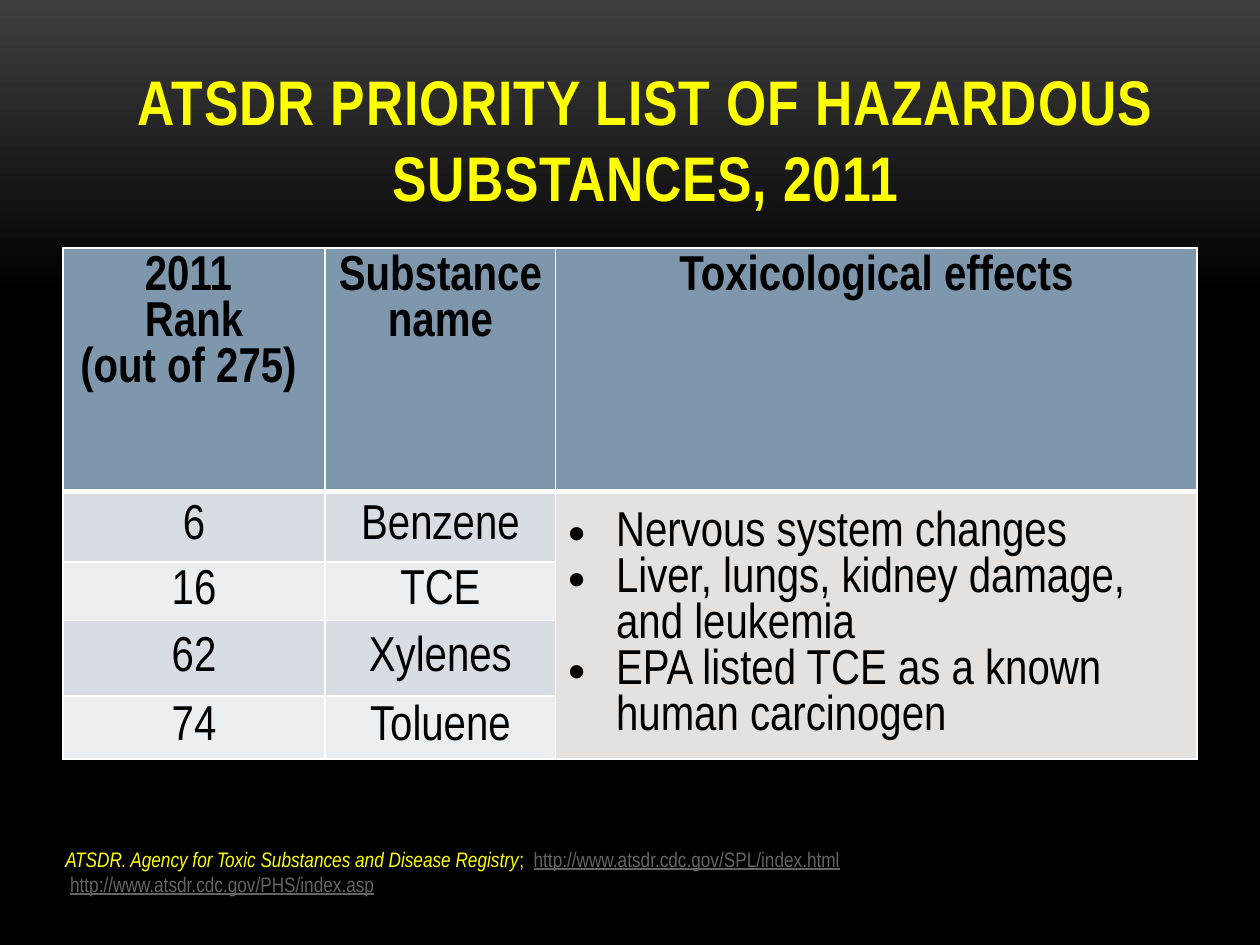
import lxml.etree
import pptx
import pptx.dml.color
import pptx.enum.text
import pptx.oxml.ns
import pptx.util

Inches = pptx.util.Inches
Pt = pptx.util.Pt
ALIGN = pptx.enum.text.PP_ALIGN
ANCHOR = pptx.enum.text.MSO_ANCHOR
COLORS = {
    "glow": "3F3F3F", "black": "000000", "white": "FFFFFF",
    "yellow": "FFFF00", "link": "646464", "header": "7E97AD",
    "odd": "D8DDE3", "even": "ECEFF1", "effects": "E5E1DE",
}
HEADER = ["2011 \nRank\n(out of 275) ", "Substance name", "Toxicological effects"]
SUBSTANCES = [("6", "Benzene"), ("16", "TCE"), ("62", "Xylenes"), ("74", "Toluene")]
EFFECTS = [
    "Nervous system changes",
    "Liver, lungs, kidney damage, and leukemia",
    "EPA listed TCE as a known human carcinogen",
]
SOURCES = [
    [("ATSDR. Agency for Toxic Substances and Disease Registry", "name"),
     (";  ", "plain"), ("http://www.atsdr.cdc.gov/SPL/index.html", "link"), (" ", "plain")],
    [(" ", "plain"), ("http://www.atsdr.cdc.gov/PHS/index.asp", "link"), (" ", "plain")],
]


def rgb(name):
    return pptx.dml.color.RGBColor.from_string(COLORS[name])


def add_xml(parent, tag, **attributes):
    return lxml.etree.SubElement(parent, pptx.oxml.ns.qn(tag), attributes)


class SlideBuilder:
    font_name = "Arial Narrow"

    def __init__(self, deck):
        self.page = deck.slides.add_slide(deck.slide_layouts[5])

    def style(self, font, size, color, bold=False, italic=False):
        font.name = self.font_name
        font.size = Pt(size)
        font.bold = bold
        font.italic = italic
        font.color.rgb = rgb(color)

    def background(self):
        fill = self.page.background.fill
        fill.gradient()
        fill.gradient_angle = 270
        for stop, color, position in zip(fill.gradient_stops, ("glow", "black"), (0, 0.31)):
            stop.color.rgb = rgb(color)
            stop.position = position

    def title(self, text, left, top, width, height):
        box = self.page.shapes.title
        box.left, box.top, box.width, box.height = map(Inches, (left, top, width, height))
        frame = box.text_frame
        frame.text = text
        frame.auto_size = pptx.enum.text.MSO_AUTO_SIZE.NONE
        frame.vertical_anchor = ANCHOR.BOTTOM
        para = frame.paragraphs[0]
        para.alignment = ALIGN.CENTER
        for span in para.runs:
            self.style(span.font, 36, "yellow", bold=True)
            span.font._element.set("spc", "50")

    def borders(self, cell, top=1, bottom=1):
        """Draw white cell edges; these must precede the cell's fill."""
        properties = cell._tc.get_or_add_tcPr()
        for side, width in (("L", 1), ("R", 1), ("T", top), ("B", bottom)):
            line = add_xml(properties, "a:ln" + side, w=str(Pt(width)))
            solid = add_xml(line, "a:solidFill")
            add_xml(solid, "a:srgbClr", val=COLORS["white"])

    def cell(self, cell, text, fill, bold=False, bullets=False):
        cell.fill.solid()
        cell.fill.fore_color.rgb = rgb(fill)
        cell.vertical_anchor = ANCHOR.TOP if bold else ANCHOR.MIDDLE
        cell.text_frame.text = text
        for para in cell.text_frame.paragraphs:
            para.alignment = ALIGN.LEFT if bullets else ALIGN.CENTER
            if bullets:
                properties = para._p.get_or_add_pPr()
                properties.set("marL", str(Inches(0.38)))
                properties.set("indent", str(Inches(-0.38)))
                add_xml(properties, "a:buFont", typeface="Arial")
                add_xml(properties, "a:buChar", char="•")
            for span in para.runs:
                self.style(span.font, 28, "black", bold=bold)

    def table(self, left, top, widths, heights):
        table = self.page.shapes.add_table(
            len(heights), len(widths), Inches(left), Inches(top),
            Inches(sum(widths)), Inches(sum(heights))).table
        for column, width in zip(table.columns, widths):
            column.width = Inches(width)
        for index, height in enumerate(heights):
            table.rows[index].height = Inches(height)
            for column in range(len(widths)):
                self.borders(table.cell(index, column),
                             top=3 if index == 1 else 1, bottom=3 if index == 0 else 1)
        for column, text in enumerate(HEADER):
            self.cell(table.cell(0, column), text, "header", bold=True)
        for index, record in enumerate(SUBSTANCES, start=1):
            for column, text in enumerate(record):
                self.cell(table.cell(index, column), text, "odd" if index % 2 else "even")
        effects = table.cell(1, 2)
        effects.merge(table.cell(len(SUBSTANCES), 2))
        self.cell(effects, "\n".join(EFFECTS), "effects", bullets=True)

    def sources(self, lines, left, top, width, height):
        box = self.page.shapes.add_textbox(*map(Inches, (left, top, width, height)))
        frame = box.text_frame
        frame.word_wrap = True
        for index, line in enumerate(lines):
            para = frame.add_paragraph() if index else frame.paragraphs[0]
            for text, role in line:
                span = para.add_run()
                span.text = text
                self.style(span.font, 12, "link" if role == "link" else "yellow",
                           italic=role == "name")
                span.font.underline = role == "link"


def main():
    deck = pptx.Presentation()
    deck.slide_width, deck.slide_height = Inches(10), Inches(7.5)
    builder = SlideBuilder(deck)
    builder.background()
    builder.title("ATSDR PRIORITY LIST OF HAZARDOUS SUBSTANCES, 2011", 0.5, 0.5, 9.25, 1.25)
    builder.table(0.5, 1.97, [2.08, 1.83, 5.09], [1.93, 0.56, 0.42, 0.6, 0.5])
    builder.sources(SOURCES, 0.42, 6.67, 8.83, 0.51)
    deck.save("out.pptx")


if __name__ == "__main__":
    main()
